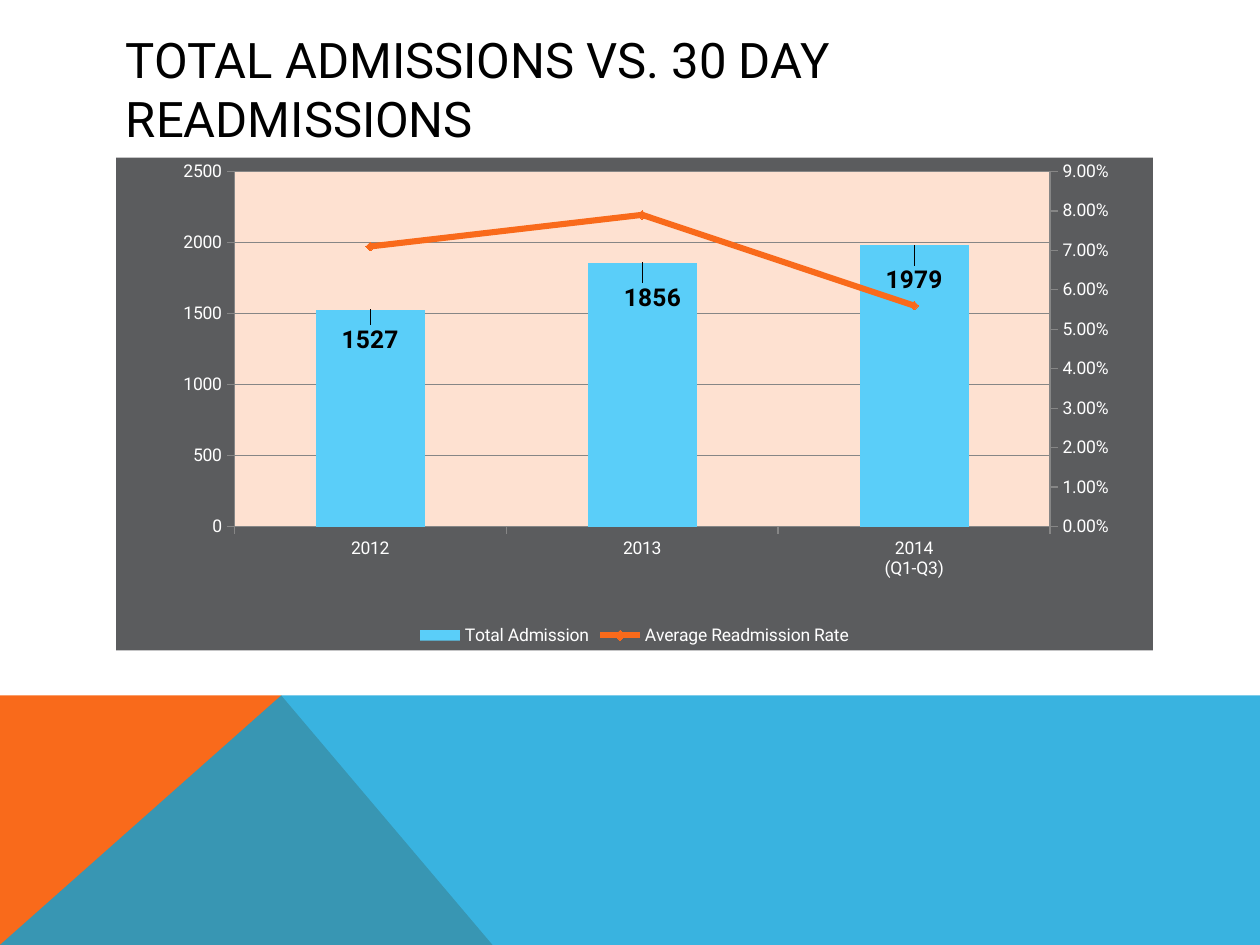
from copy import deepcopy

from lxml import etree
from pptx import Presentation
from pptx.chart.data import CategoryChartData
from pptx.dml.color import RGBColor
from pptx.enum.chart import XL_CHART_TYPE as ChartType
from pptx.enum.chart import XL_LABEL_POSITION as LabelPosition
from pptx.enum.chart import XL_LEGEND_POSITION as LegendPosition
from pptx.enum.chart import XL_MARKER_STYLE as MarkerStyle
from pptx.enum.text import MSO_ANCHOR as Anchor
from pptx.oxml import parse_xml
from pptx.oxml.ns import nsdecls, qn
from pptx.util import Cm, Pt

FONT = "Roboto"
ORANGE = "F96A1B"


def paint(color_format, hex_color):
    color_format.rgb = RGBColor.from_string(hex_color)


def chart_xml(tag, content):
    return parse_xml(f"<c:{tag} {nsdecls('c', 'a')}>{content}</c:{tag}>")


presentation = Presentation()
presentation.slide_width, presentation.slide_height = Cm(25.4), Cm(19.05)
slide = presentation.slides.add_slide(presentation.slide_layouts[6])

# Footer bands, meeting at one peak
peak = (5.67, 14.02)
bands = [
    (ORANGE, 100, [(0, 19.05), (0, 14.02), peak, (9.93, 19.05)]),
    ("08A1D9", 80, [(0, 19.05), peak, (25.4, 14.02), (25.4, 19.05)]),
]
for color, opacity, corners in bands:
    points = [(Cm(x), Cm(y)) for x, y in corners]
    builder = slide.shapes.build_freeform(*points[0], scale=1.0)
    builder.add_line_segments(points[1:], close=True)
    band = builder.convert_to_shape()
    band.shadow.inherit = False
    band.fill.solid()
    paint(band.fill.fore_color, color)
    band.line.fill.background()
    if opacity < 100:
        color_element = band._element.spPr.find(".//" + qn("a:srgbClr"))
        etree.SubElement(color_element, qn("a:alpha"), val=str(opacity * 1000))

# Title
title = slide.shapes.add_textbox(Cm(2.29), Cm(1.02), Cm(20.88), Cm(1.52))
title.text_frame.word_wrap = True
title.text_frame.vertical_anchor = Anchor.MIDDLE
run = title.text_frame.paragraphs[0].add_run()
run.text = "TOTAL ADMISSIONS VS. 30 DAY READMISSIONS"
run.font.name, run.font.size = FONT, Pt(28)
paint(run.font.color, "000000")

# Chart
data = CategoryChartData()
data.categories = ["2012", "2013", "2014\n(Q1-Q3)"]
data.add_series("Total Admission", [1527, 1856, 1979], "General")
data.add_series("Average Readmission Rate", [0.071, 0.079, 0.056], "0.00%")
chart = slide.shapes.add_chart(
    ChartType.COLUMN_CLUSTERED, Cm(2.34), Cm(3.18), Cm(20.9), Cm(9.93), data
).chart
chart.has_title = False
chart.font.name, chart.font.size = FONT, Pt(10)
paint(chart.font.color, "FFFFFF")
chart.has_legend = True
chart.legend.position = LegendPosition.BOTTOM
chart.legend.include_in_layout = False

chart.value_axis.minimum_scale = 0
chart.value_axis.maximum_scale = 2500
chart.value_axis.major_unit = 500
chart.value_axis.has_major_gridlines = True
chart.value_axis.tick_labels.number_format = "General"
chart.value_axis.tick_labels.number_format_is_linked = False
for line in (
    chart.value_axis.major_gridlines.format.line,
    chart.value_axis.format.line,
    chart.category_axis.format.line,
):
    paint(line.color, "868686")
    line.width = Pt(0.75)

columns = chart.plots[0]
columns.gap_width = 150
columns.vary_by_categories = False
admissions = columns.series[0]
admissions.format.fill.solid()
paint(admissions.format.fill.fore_color, "5ACEF9")

label_offsets = [(0, 0.02), (0.01, 0.03), (0, 0.03)]
for index, (x, y) in enumerate(label_offsets):
    label = admissions.points[index].data_label
    label.font.name, label.font.size, label.font.bold = FONT, Pt(14), True
    paint(label.font.color, "000000")
    label.position = LabelPosition.INSIDE_END
    label_element = admissions._element.findall(".//" + qn("c:dLbl"))[index]
    label_element.find(qn("c:idx")).addnext(chart_xml(
        "layout", f'<c:manualLayout><c:x val="{x}"/><c:y val="{y}"/></c:manualLayout>'
    ))

# Readmission rate: a line on a second pair of axes
rate_element = columns.series[1]._element
invert = rate_element.find(qn("c:invertIfNegative"))
if invert is not None:
    rate_element.remove(invert)
line_chart = chart_xml(
    "lineChart",
    '<c:grouping val="standard"/><c:varyColors val="0"/><c:marker val="1"/>'
    '<c:axId val="5001"/><c:axId val="5002"/>',
)
line_chart[1].addnext(rate_element)
plot_area = chart._chartSpace.chart.plotArea
plot_area.find(qn("c:barChart")).addnext(line_chart)

rate_category_axis = deepcopy(chart.category_axis._element)
rate_axis = deepcopy(chart.value_axis._element)
chart.value_axis._element.addnext(rate_category_axis)
rate_category_axis.addnext(rate_axis)
rate_axis.remove(rate_axis.find(qn("c:majorGridlines")))
for axis, changes in (
    (rate_category_axis, {"axId": "5001", "delete": "1", "crossAx": "5002"}),
    (rate_axis, {"axId": "5002", "axPos": "r", "crossAx": "5001",
                 "crosses": "max", "majorUnit": "0.01"}),
):
    for tag, value in changes.items():
        axis.find(qn(f"c:{tag}")).set("val", value)
rate_axis.find(".//" + qn("c:max")).set("val", "0.09")
rate_axis.find(qn("c:numFmt")).set("formatCode", "0.00%")

rate = chart.plots[1].series[0]
rate.smooth = False
rate.format.line.width = Pt(3.5)
paint(rate.format.line.color, ORANGE)
rate.marker.style, rate.marker.size = MarkerStyle.DIAMOND, 5
rate.marker.format.fill.solid()
paint(rate.marker.format.fill.fore_color, ORANGE)
paint(rate.marker.format.line.color, ORANGE)

# Plot position and backgrounds
for layout in plot_area.findall(qn("c:layout")):
    plot_area.remove(layout)
plot_area.insert(0, chart_xml(
    "layout",
    '<c:manualLayout><c:layoutTarget val="inner"/>'
    '<c:xMode val="edge"/><c:yMode val="edge"/>'
    '<c:x val="0.114"/><c:y val="0.028"/><c:w val="0.787"/><c:h val="0.721"/>'
    "</c:manualLayout>",
))
background = '<a:solidFill><a:srgbClr val="{}"/></a:solidFill><a:ln><a:noFill/></a:ln>'
plot_area.append(chart_xml("spPr", background.format("FEE1D1")))
chart._chartSpace.chart.addnext(chart_xml("spPr", background.format("5B5C5E")))

presentation.save("out.pptx")
